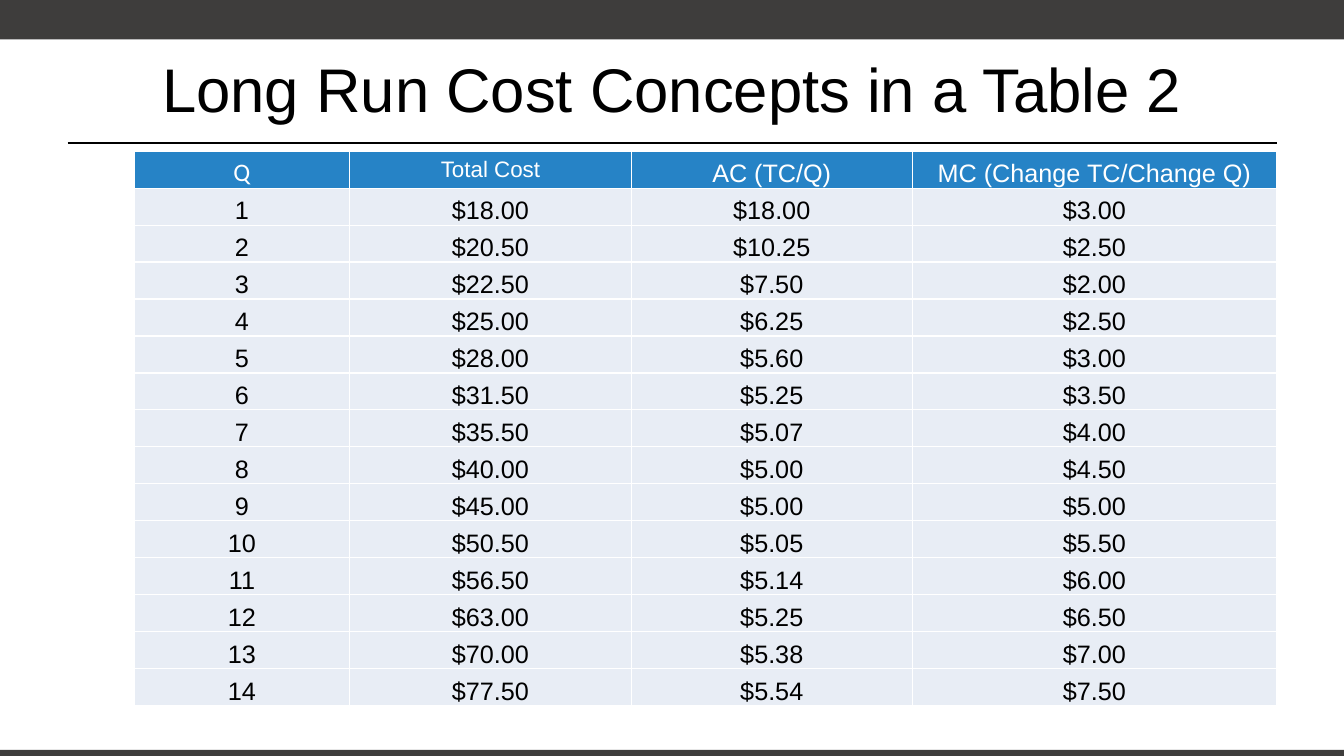
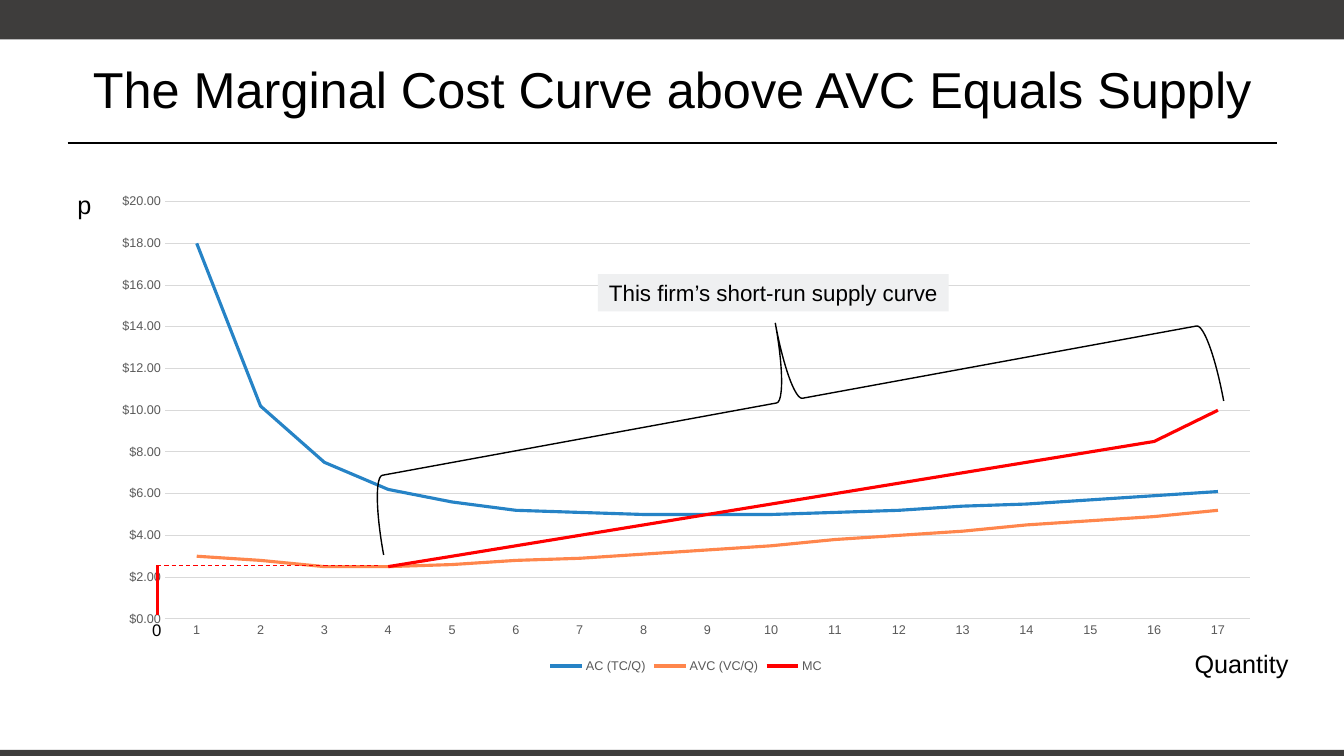
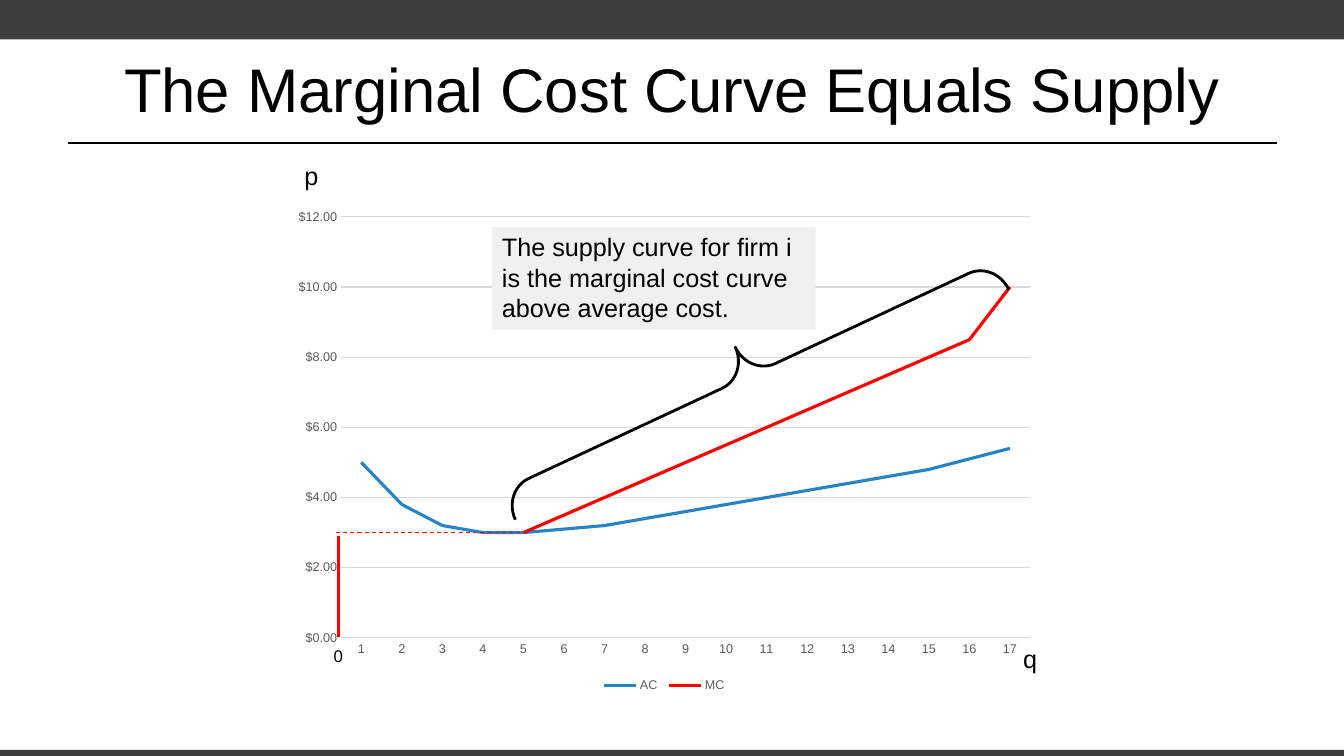
from dataclasses import dataclass
from pptx import Presentation
from pptx.chart.data import CategoryChartData
from pptx.dml.color import RGBColor
from pptx.enum.chart import XL_CHART_TYPE, XL_LEGEND_POSITION, XL_TICK_MARK
from pptx.enum.dml import MSO_LINE
from pptx.enum.shapes import MSO_CONNECTOR, MSO_SHAPE
from pptx.enum.text import MSO_ANCHOR, PP_ALIGN
from pptx.oxml import parse_xml
from pptx.oxml.ns import nsdecls
from pptx.util import Inches, Pt


@dataclass(frozen=True)
class Theme:
    font: str = "Arial"
    alt: str = "Calibri"
    ink: str = "000000"
    paper: str = "FFFFFF"
    band: str = "3E3D3C"
    blue: str = "2683C6"
    orange: str = "FF864C"
    red: str = "FF0000"
    row: str = "E8EDF5"
    note: str = "EFF0F1"
    grid: str = "D9D9D9"
    gray: str = "595959"
    title: int = 44
    small: int = 36
    body: int = 18
    label: int = 16
    zero: int = 12
    axis: int = 9


@dataclass(frozen=True)
class Box:
    x: float
    y: float
    w: float
    h: float

    def sub(self, x, y, w, h):
        return Box(self.x + x, self.y + y, w, h)

    def emu(self):
        return [Inches(v) for v in (self.x, self.y, self.w, self.h)]


T = Theme()
HEAD = Box(0.67, 0.25, 12, 1.25)


def color(code):
    return RGBColor.from_string(code)


def write(frame, text, size=T.body, ink=T.ink, font=T.font, align=PP_ALIGN.LEFT):
    for i, line in enumerate(text.split("\n")):
        para = frame.add_paragraph() if i else frame.paragraphs[0]
        para.alignment = align
        run = para.add_run()
        run.text = line
        run.font.size = Pt(size)
        run.font.name = font
        run.font.color.rgb = color(ink)


def label(slide, box, text, wrap=False, anchor=MSO_ANCHOR.TOP, **style):
    frame = slide.shapes.add_textbox(*box.emu()).text_frame
    frame.word_wrap = wrap
    frame.vertical_anchor = anchor
    write(frame, text, **style)


def block(slide, box, fill, text="", anchor=MSO_ANCHOR.MIDDLE, **style):
    shape = slide.shapes.add_shape(MSO_SHAPE.RECTANGLE, *box.emu())
    shape.shadow.inherit = False
    shape.fill.solid()
    shape.fill.fore_color.rgb = color(fill)
    shape.line.fill.background()
    if text:
        shape.text_frame.word_wrap = True
        shape.text_frame.vertical_anchor = anchor
        write(shape.text_frame, text, **style)


def rule(slide, box, ink, width, dash=False):
    ends = (box.x, box.y, box.x + box.w, box.y + box.h)
    line = slide.shapes.add_connector(MSO_CONNECTOR.STRAIGHT, *map(Inches, ends))
    line.line.color.rgb = color(ink)
    line.line.width = Pt(width)
    if dash:
        line.line.dash_style = MSO_LINE.DASH
    line._element.spPr.append(parse_xml(f"<a:effectLst {nsdecls('a')}/>"))


def brace(slide, box, angle, bend, width):
    shape = slide.shapes.add_shape(MSO_SHAPE.LEFT_BRACE, *box.emu())
    shape.shadow.inherit = False
    shape.rotation = angle
    shape.adjustments[0] = bend
    shape.adjustments[1] = 0.5
    shape.fill.background()
    shape.line.color.rgb = color(T.ink)
    shape.line.width = Pt(width)


def start(deck, title, size=T.title):
    slide = deck.slides.add_slide(deck.slide_layouts[6])
    block(slide, Box(0, 0, 13.33, 0.39), T.band)
    block(slide, Box(0, 7.44, 13.33, 0.06), T.band)
    rule(slide, HEAD.sub(0, 1.17, HEAD.w, 0), T.ink, 1.25)
    label(slide, HEAD, title, wrap=True, anchor=MSO_ANCHOR.MIDDLE,
          size=size, align=PP_ALIGN.CENTER)
    return slide


def edge(cell):
    props = cell._tc.get_or_add_tcPr()
    for i, side in enumerate("LRTB"):
        props.insert(i, parse_xml(
            f'<a:ln{side} {nsdecls("a")} w="12700"><a:solidFill>'
            f'<a:srgbClr val="{T.paper}"/></a:solidFill></a:ln{side}>'))


def fill(cell, text, back, pad=0, anchor=MSO_ANCHOR.BOTTOM, **style):
    cell.fill.solid()
    cell.fill.fore_color.rgb = color(back)
    edge(cell)
    cell.vertical_anchor = anchor
    cell.margin_left = cell.margin_right = Inches(pad)
    cell.margin_top = cell.margin_bottom = Inches(pad / 2)
    write(cell.text_frame, text, align=PP_ALIGN.CENTER, **style)


def costs(slide, box, base, totals):
    heads = [("Q", {"font": T.alt}),
             ("Total Cost", {"size": T.label, "pad": 0.1, "anchor": MSO_ANCHOR.MIDDLE}),
             ("AC (TC/Q)", {}),
             ("MC (Change TC/Change Q)", {})]
    count = len(totals) + 1
    table = slide.shapes.add_table(count, len(heads), *box.emu()).table
    table.first_row = table.horz_banding = False
    for col, width in zip(table.columns, (2.14, 2.79, 2.79, 3.61)):
        col.width = Inches(width)
    for row in table.rows:
        row.height = Inches(box.h / count)
    for col, (text, style) in enumerate(heads):
        fill(table.cell(0, col), text, T.blue, ink=T.paper, **style)
    for q, (last, total) in enumerate(zip([base] + totals, totals), 1):
        money = [f"${v:.2f}" for v in (total, total / q, total - last)]
        for col, text in enumerate([str(q)] + money):
            fill(table.cell(q, col), text, T.row)


def style(font):
    font.size = Pt(T.axis)
    font.name = T.font
    font.color.rgb = color(T.gray)


def plot(slide, box, top, lines):
    data = CategoryChartData(number_format='"$"#,##0.00')
    data.categories = [str(q) for q in range(1, 18)]
    for name, _, vals in lines:
        data.add_series(name, vals)
    chart = slide.shapes.add_chart(XL_CHART_TYPE.LINE, *box.emu(), data).chart
    chart.has_title = False
    style(chart.font)
    chart.has_legend = True
    chart.legend.position = XL_LEGEND_POSITION.BOTTOM
    chart.legend.include_in_layout = False
    style(chart.legend.font)
    for axis in (chart.category_axis, chart.value_axis):
        axis.major_tick_mark = axis.minor_tick_mark = XL_TICK_MARK.NONE
        style(axis.tick_labels.font)
    cats, vals = chart.category_axis, chart.value_axis
    vals.minimum_scale, vals.maximum_scale, vals.major_unit = 0, top, 2
    vals.tick_labels.number_format = '"$"#,##0.00'
    vals.tick_labels.number_format_is_linked = False
    vals.format.line.fill.background()
    for line in (cats.format.line, vals.major_gridlines.format.line):
        line.color.rgb = color(T.grid)
        line.width = Pt(0.75)
    chart.plots[0].vary_by_categories = False
    for series, (_, ink, _) in zip(chart.plots[0].series, lines):
        series.smooth = False
        series.format.line.color.rgb = color(ink)
        series.format.line.width = Pt(2.25)


def margin(first):
    steps = [q / 2 + 0.5 for q in range(first, 17)]
    return [None] * (first - 1) + steps + [10]


def short(slide, box):
    plot(slide, box, 20, [
        ("AC (TC/Q)", T.blue, [18, 10.2, 7.5, 6.2, 5.6, 5.2, 5.1, 5, 5, 5, 5.1,
                               5.2, 5.4, 5.5, 5.7, 5.9, 6.1]),
        ("AVC (VC/Q)", T.orange, [3, 2.8, 2.5, 2.5, 2.6, 2.8, 2.9, 3.1, 3.3, 3.5,
                                  3.8, 4, 4.2, 4.5, 4.7, 4.9, 5.2]),
        ("MC", T.red, margin(4))])
    block(slide, box.sub(4.95, 0.89, 3.48, 0.37), T.note,
          "This firm’s short-run supply curve", size=T.label, align=PP_ALIGN.CENTER)
    label(slide, box.sub(10.77, 4.55, 1.14, 0.4), "Quantity")
    brace(slide, box.sub(6.07, -2.09, 1.56, 8.47), 79.6, 0.083, 1)
    rule(slide, box.sub(0.58, 3.78, 0, 0.49), T.red, 2)
    label(slide, box.sub(0.43, 4.27, 0.29, 0.3), "0", size=T.zero)
    rule(slide, box.sub(0.58, 3.78, 2.19, 0), T.red, 0.75, dash=True)
    label(slide, box.sub(-0.31, 0, 0.34, 0.4), "p")


def supply(slide, box):
    plot(slide, box, 12, [
        ("AC ", T.blue, [5, 3.8, 3.2, 3, 3, 3.1, 3.2, 3.4, 3.6, 3.8, 4, 4.2, 4.4,
                         4.6, 4.8, 5.1, 5.4]),
        ("MC", T.red, margin(5))])
    brace(slide, box.sub(4.3, -0.95, 0.63, 5.4), 65, 0.463, 2)
    block(slide, box.sub(2.07, 0.27, 3.21, 1.02), T.note,
          "The supply curve for firm i\nis the marginal cost curve\nabove average cost.",
          anchor=MSO_ANCHOR.TOP)
    label(slide, box.sub(0.11, -0.44, 0.31, 0.34), "p")
    label(slide, box.sub(7.24, 4.35, 0.34, 0.4), "q")
    rule(slide, box.sub(0.55, 3.34, 0, 1), T.red, 2)
    rule(slide, box.sub(0.52, 3.3, 1.84, 0), T.red, 0.75, dash=True)
    label(slide, box.sub(0.4, 4.38, 0.29, 0.3), "0", size=T.zero)


def main():
    deck = Presentation()
    deck.slide_width, deck.slide_height = Inches(13.33), Inches(7.5)
    costs(start(deck, "Long Run Cost Concepts in a Table 2"),
          Box(1.33, 1.5, 11.33, 5.5), 15,
          [18, 20.5, 22.5, 25, 28, 31.5, 35.5, 40, 45, 50.5, 56.5, 63, 70, 77.5])
    short(start(deck, "The Marginal Cost Curve above AVC Equals Supply", T.small),
          Box(0.98, 1.83, 11.65, 4.89))
    supply(start(deck, "The Marginal Cost Curve Equals Supply"),
           Box(2.81, 1.98, 7.56, 4.93))
    deck.save("out.pptx")


if __name__ == "__main__":
    main()
